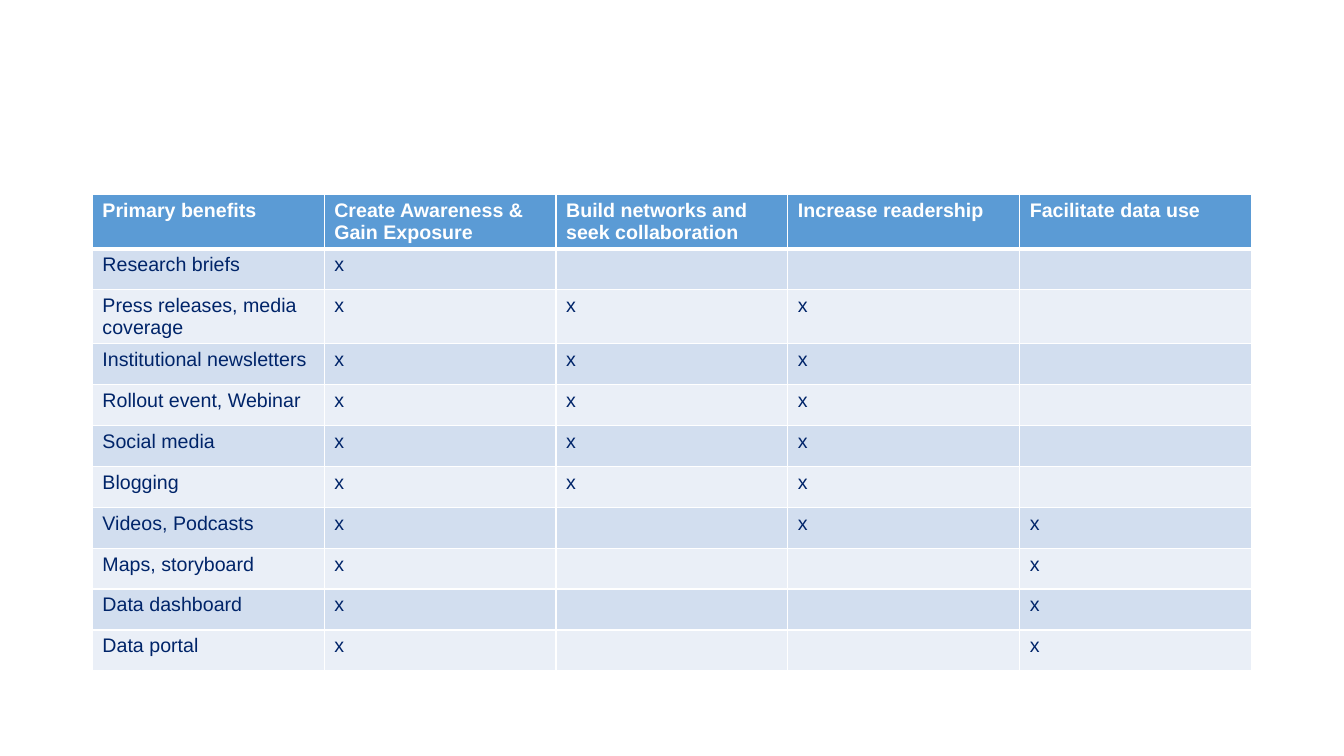
"""Build a slide with a table of outreach products and their primary benefits."""
from lxml import etree
from pptx import Presentation
from pptx.dml.color import RGBColor
from pptx.oxml.ns import qn
from pptx.util import Pt

COLORS = {
    "header": "5B9BD5",
    "odd": "D2DEEF",
    "even": "EAEFF7",
    "border": "FFFFFF",
    "header_text": "FFFFFF",
    "body_text": "002469",
}
BLANK_LAYOUT = 6
COLUMN_WIDTH = 165.6
ROW_HEIGHT = 29.2

headings = [
    "Primary benefits",
    "Create Awareness & Gain Exposure",
    "Build networks and seek collaboration",
    "Increase readership",
    "Facilitate data use",
]
products = [
    ("Research briefs", [1]),
    ("Press releases, media coverage", [1, 2, 3]),
    ("Institutional newsletters", [1, 2, 3]),
    ("Rollout event, Webinar", [1, 2, 3]),
    ("Social media", [1, 2, 3]),
    ("Blogging", [1, 2, 3]),
    ("Videos, Podcasts", [1, 3, 4]),
    ("Maps, storyboard", [1, 4]),
    ("Data dashboard", [1, 4]),
    ("Data portal", [1, 4]),
]
rows = [headings]
for product, benefits in products:
    marks = ["x" if column in benefits else "" for column in range(1, len(headings))]
    rows.append([product] + marks)


def write(cell, text, color, bold=False, size=14, font="Arial"):
    """Put formatted text in a table cell."""
    span = cell.text_frame.paragraphs[0].add_run()
    span.text = text
    span.font.name = font
    span.font.size = Pt(size)
    span.font.bold = bold
    span.font.color.rgb = RGBColor.from_string(color)


def add_borders(cell, **widths):
    """Draw the cell's sides with the given widths in points."""
    properties = cell._tc.get_or_add_tcPr()
    for side, width in widths.items():
        line = etree.SubElement(properties, qn(f"a:{side}"), w=str(Pt(width)))
        fill = etree.SubElement(line, qn("a:solidFill"))
        etree.SubElement(fill, qn("a:srgbClr"), val=COLORS["border"])


deck = Presentation()
deck.slide_width = Pt(960)
deck.slide_height = Pt(540)
page = deck.slides.add_slide(deck.slide_layouts[BLANK_LAYOUT])

table = page.shapes.add_table(
    len(rows), len(headings), Pt(66), Pt(139),
    Pt(COLUMN_WIDTH * len(headings)), Pt(ROW_HEIGHT * len(rows)),
).table
for column in table.columns:
    column.width = Pt(COLUMN_WIDTH)

for row_index, texts in enumerate(rows):
    table.rows[row_index].height = Pt(ROW_HEIGHT)
    is_header = row_index == 0
    band = "header" if is_header else "odd" if row_index % 2 else "even"
    text_color = COLORS["header_text" if is_header else "body_text"]
    for column_index, text in enumerate(texts):
        cell = table.cell(row_index, column_index)
        add_borders(cell, lnL=1, lnR=1, lnT=3 if row_index == 1 else 1, lnB=3 if is_header else 1)
        cell.fill.solid()
        cell.fill.fore_color.rgb = RGBColor.from_string(COLORS[band])
        if text:
            write(cell, text, color=text_color, bold=is_header)

deck.save("out.pptx")
